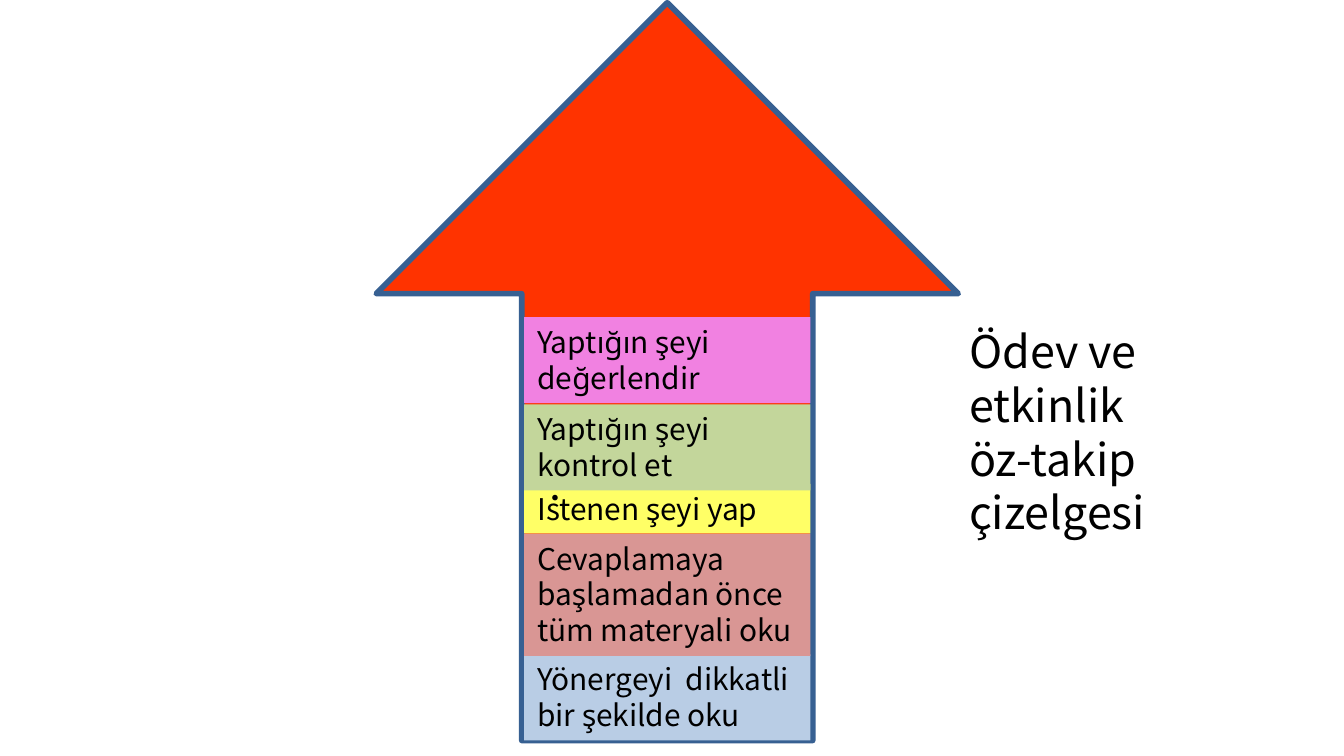
from pptx import Presentation
from pptx.dml.color import RGBColor
from pptx.enum.shapes import MSO_SHAPE as Preset
from pptx.enum.text import MSO_ANCHOR as Anchor, MSO_AUTO_SIZE as AutoSize, PP_ALIGN as Align
from pptx.util import Inches, Pt

THEME = {
    "font": "Noto Sans CJK KR",
    "text": "000000",
    "arrow": "FF3300",
    "outline": "376092",
    "outline_width": 3,
    "title_size": 24,
    "step_size": 16,
}
TITLE = ["Ödev ve etkinlik", "öz-takip çizelgesi"]
STEPS = [
    (4.87, "B9CDE5", ["Yönergeyi  dikkatli", "bir şekilde oku"]),
    (3.97, "D99694", ["Cevaplamaya", "başlamadan önce", "tüm materyali oku"]),
    (3.60, "FFFF66", ["İstenen şeyi yap"]),
    (3.01, "C3D69B", ["Yaptığın şeyi", "kontrol et"]),
    (2.36, "F181E1", ["Yaptığın şeyi", "değerlendir"]),
]
SLIDE_WIDTH = 10
SLIDE_HEIGHT = SLIDE_WIDTH * 9 / 16
ARROW_BOX = (2.8, 0.02, 4.33, 5.49)
TITLE_BOX = (7.11, 2.36, 2.52, 1.72)
STEP_LEFT, STEP_WIDTH = 3.9, 2.13
LINE_HEIGHT, PADDING = 0.27, 0.05
FRAME_FORMAT = {
    "word_wrap": True,
    "auto_size": AutoSize.NONE,
    "vertical_anchor": Anchor.TOP,
    "margin_left": Inches(0.1),
    "margin_right": Inches(0.1),
    "margin_top": Inches(PADDING),
    "margin_bottom": Inches(PADDING),
}


def write_text(shape, text, size):
    frame = shape.text_frame
    for name, value in FRAME_FORMAT.items():
        setattr(frame, name, value)
    frame.text = text
    for paragraph in frame.paragraphs:
        paragraph.alignment = Align.LEFT
        for run in paragraph.runs:
            run.font.name = THEME["font"]
            run.font.size = Pt(size)
            run.font.color.rgb = RGBColor.from_string(THEME["text"])


def add_filled_shape(slide, preset, box, color):
    shape = slide.shapes.add_shape(preset, *map(Inches, box))
    shape.shadow.inherit = False
    shape.fill.solid()
    shape.fill.fore_color.rgb = RGBColor.from_string(color)
    shape.line.fill.background()
    return shape


def add_title(slide):
    title = slide.shapes.title
    for name, value in zip(("left", "top", "width", "height"), TITLE_BOX):
        setattr(title, name, Inches(value))
    write_text(title, "\n".join(TITLE), THEME["title_size"])


def add_arrow(slide):
    arrow = add_filled_shape(slide, Preset.UP_ARROW, ARROW_BOX, THEME["arrow"])
    arrow.line.color.rgb = RGBColor.from_string(THEME["outline"])
    arrow.line.width = Pt(THEME["outline_width"])


def add_steps(slide):
    for top, color, lines in STEPS:
        height = LINE_HEIGHT * len(lines) + 2 * PADDING
        box = (STEP_LEFT, top, STEP_WIDTH, height)
        step = add_filled_shape(slide, Preset.RECTANGLE, box, color)
        write_text(step, "\v".join(lines), THEME["step_size"])


def main():
    presentation = Presentation()
    presentation.slide_width = Inches(SLIDE_WIDTH)
    presentation.slide_height = Inches(SLIDE_HEIGHT)
    slide = presentation.slides.add_slide(presentation.slide_layouts[5])
    add_title(slide)
    add_arrow(slide)
    add_steps(slide)
    presentation.save("out.pptx")


if __name__ == "__main__":
    main()
